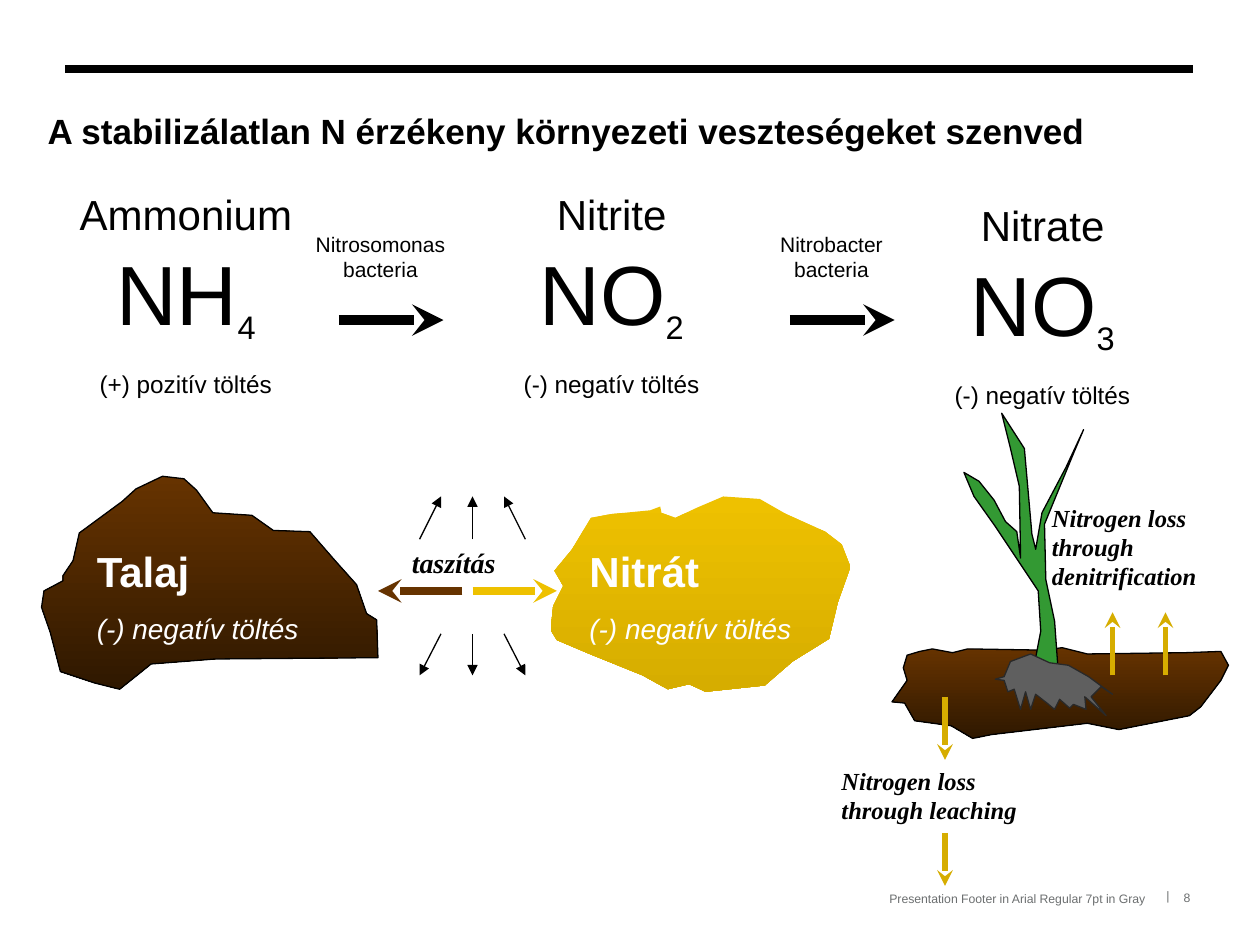
from dataclasses import dataclass
from typing import Optional

from lxml import etree
from pptx import Presentation
from pptx.dml.color import RGBColor
from pptx.enum.shapes import MSO_CONNECTOR
from pptx.enum.text import MSO_ANCHOR, PP_ALIGN
from pptx.oxml.ns import qn
from pptx.util import Inches, Pt

LEFT, CENTER, RIGHT = PP_ALIGN.LEFT, PP_ALIGN.CENTER, PP_ALIGN.RIGHT
TOP, MIDDLE = MSO_ANCHOR.TOP, MSO_ANCHOR.MIDDLE
STRAIGHT = MSO_CONNECTOR.STRAIGHT
COLUMNS, ROWS = 1000, 750
BLACK, WHITE, GRAY = "000000", "FFFFFF", "6C6F70"
BROWN, GOLD, DARK_GOLD = "663300", "EEC100", "D6AD00"
BROWN_FADE, GOLD_FADE = (BROWN, "2F1800"), (GOLD, DARK_GOLD)
SANS, SERIF = "Arial", "Times New Roman"


@dataclass
class Span:
    text: str
    size: float
    bold: bool = False
    italic: bool = False
    font: str = SANS
    color: str = BLACK
    lowered: bool = False


@dataclass
class Label:
    area: tuple
    paragraphs: list
    align: PP_ALIGN = LEFT
    anchor: MSO_ANCHOR = TOP
    spacing: Optional[object] = None
    gap: float = 0.575  # space before, as a share of the paragraph's text size
    inset: tuple = (0.1, 0.05)


@dataclass
class Outline:
    corners: list
    fills: tuple
    edge: Optional[str] = BLACK


deck = Presentation()
deck.slide_width, deck.slide_height = Inches(10), Inches(7.5)
page = deck.slides.add_slide(deck.slide_layouts[6])


def across(column: float) -> int:
    return round(deck.slide_width * column / COLUMNS)


def down(row: float) -> int:
    return round(deck.slide_height * row / ROWS)


def paint(target, color: str) -> None:
    target.rgb = RGBColor.from_string(color)


def add_span(para, item: Span) -> None:
    for index, line in enumerate(item.text.split("\n")):
        if index:
            para.add_line_break()
        span = para.add_run()
        span.text = line
        values = {"size": Pt(item.size), "bold": item.bold, "italic": item.italic, "name": item.font}
        for name, value in values.items():
            setattr(span.font, name, value)
        paint(span.font.color, item.color)
        if item.lowered:
            span.font._element.set("baseline", "-25000")


def add_label(label: Label) -> None:
    x, y, width, height = label.area
    box = page.shapes.add_textbox(across(x), down(y), across(width), down(height))
    frame = box.text_frame
    side, edge = map(Inches, label.inset)
    values = {"word_wrap": True, "vertical_anchor": label.anchor, "margin_left": side,
              "margin_right": side, "margin_top": edge, "margin_bottom": edge}
    for name, value in values.items():
        setattr(frame, name, value)
    for index, spans in enumerate(label.paragraphs):
        para = frame.add_paragraph() if index else frame.paragraphs[0]
        para.alignment = label.align
        if label.spacing is not None:
            para.line_spacing = label.spacing
        if index:
            para.space_before = Pt(round(label.gap * spans[0].size, 1))
        for item in spans:
            add_span(para, item)


def add_line(start: tuple, end: tuple, color: str, width: float, tip: Optional[str] = None) -> None:
    line = page.shapes.add_connector(STRAIGHT, across(start[0]), down(start[1]), across(end[0]), down(end[1]))
    paint(line.line.color, color)
    line.line.width = Pt(width)
    if tip:
        etree.SubElement(line.line._get_or_add_ln(), qn("a:tailEnd"), type=tip)
    etree.SubElement(line._element.spPr, qn("a:effectLst"))


def add_outline(outline: Outline) -> None:
    first, *others = [(across(x), down(y)) for x, y in outline.corners]
    builder = page.shapes.build_freeform(*first)
    builder.add_line_segments(others, close=True)
    shape = builder.convert_to_shape()
    shape.shadow.inherit = False
    if len(outline.fills) == 1:
        shape.fill.solid()
        paint(shape.fill.fore_color, outline.fills[0])
    else:
        shape.fill.gradient()
        shape.fill.gradient_angle = 270
        for position, (stop, color) in enumerate(zip(shape.fill.gradient_stops, outline.fills)):
            stop.position = position
            paint(stop.color, color)
    if outline.edge:
        paint(shape.line.color, outline.edge)
        shape.line.width = Pt(0.75)
    else:
        shape.line.fill.background()


SOIL = Outline([
    (50, 457), (58, 445), (63, 423), (97, 398), (108, 388), (129, 378), (146, 380), (156, 389), (169, 407),
    (200, 409), (217, 421), (246, 422), (266, 445), (283, 464), (291, 487), (299, 492), (300, 522),
    (171, 523), (120, 527), (95, 547), (75, 542), (48, 533), (40, 502), (33, 482), (35, 469), (50, 461)], BROWN_FADE)
NITRATE = Outline([
    (536, 411), (525, 407), (524, 402), (516, 405), (485, 408), (469, 411), (454, 436), (440, 453), (447, 465),
    (439, 481), (437, 500), (442, 508), (468, 519), (510, 536), (530, 547), (547, 543), (560, 549), (607, 544),
    (629, 525), (658, 507), (665, 478), (675, 450), (668, 432), (655, 422), (624, 408), (603, 396),
    (574, 394), (553, 403)], GOLD_FADE, None)
GROUND = Outline([
    (730, 517), (740, 515), (756, 518), (768, 515), (829, 516), (843, 514), (863, 519), (941, 518), (969, 517),
    (975, 528), (969, 540), (953, 561), (944, 568), (888, 579), (863, 574), (787, 583), (772, 586),
    (755, 576), (726, 572), (718, 558), (708, 557), (720, 540), (717, 530), (720, 520)], BROWN_FADE)
PLANT = Outline([
    (822, 522), (826, 501), (824, 469), (810, 448), (790, 418), (773, 394), (765, 375), (777, 382), (789, 397),
    (798, 414), (807, 422), (810, 443), (809, 386), (802, 356), (795, 328), (813, 356), (819, 424), (822, 436),
    (827, 407), (846, 371), (860, 341), (852, 360), (829, 416), (830, 460), (837, 493), (840, 535),
    (837, 544), (824, 536)], ("339933",))
ROOTS = Outline([
    (833, 526), (818, 519), (802, 525), (797, 537), (790, 539), (797, 540), (800, 549), (805, 547), (810, 563),
    (814, 549), (818, 563), (822, 551), (831, 558), (837, 563), (841, 555), (849, 562), (852, 559), (862, 563),
    (861, 553), (878, 568), (866, 553), (874, 545), (883, 551), (864, 537), (848, 528)], ("5F5F5F",), "292929")

add_line((52, 55), (947, 55), BLACK, 4.5)
for area, text, align, anchor in [
        ((446, 707, 463, 14), "Presentation Footer in Arial Regular 7pt in Gray", RIGHT, TOP),
        ((921, 705, 12, 15), "|", CENTER, TOP), ((934, 705, 16, 15), "8", CENTER, MIDDLE)]:
    add_label(Label(area, [[Span(text, 7, color=GRAY)]], align, anchor, inset=(0, 0)))

for outline in (SOIL, NITRATE, GROUND, PLANT, ROOTS):
    add_outline(outline)
for x, name in [(67, "Talaj"), (458, "Nitrát")]:
    add_label(Label((x, 428, 242, 81), [[Span(name, 24, bold=True, color=WHITE)],
                                        [Span("(-) negatív töltés", 16, italic=True, color=WHITE)]]))
for area, text, size in [((317, 428, 117, 37), "taszítás", 16),
                         ((658, 603, 192, 57), "Nitrogen loss\nthrough leaching", 14),
                         ((825, 394, 175, 80), "Nitrogen loss\nthrough\ndenitrification", 14)]:
    add_label(Label(area, [[Span(text, size, True, True, SERIF)]]))

for near, far in [(350, 333), (375, 375), (400, 417)]:
    add_line((near, 503), (far, 536), BLACK, 0.75, "triangle")
    add_line((far, 428), (near, 394), BLACK, 0.75, "triangle")
for start, end, color in [(367, 300, BROWN), (375, 442, GOLD)]:
    add_line((start, 469), (end, 469), color, 4.5, "stealth")
for x, start, end in [(883, 536, 486), (925, 536, 486), (750, 661, 703), (750, 553, 603)]:
    add_line((x, start), (x, end), DARK_GOLD, 3, "stealth")

for area, name, formula, count, charge in [
        ((35, 162, 225, 133), "Ammonium", "NH", "4", "(+) pozitív töltés"),
        ((352, 162, 267, 132), "Nitrite", "NO", "2", "(-) negatív töltés"),
        ((719, 171, 217, 132), "Nitrate", "NO", "3", "(-) negatív töltés")]:
    add_label(Label(area, [[Span(name, 24)], [Span(formula, 48), Span(count, 32, lowered=True)],
                           [Span(charge, 24, lowered=True)]], CENTER, spacing=0.5))
for x, bacteria in [(177, "Nitrosomonas"), (535, "Nitrobacter")]:
    add_line((x + 92, 254), (x + 175, 254), BLACK, 6, "stealth")
    add_label(Label((x, 179, 250, 50), [[Span(bacteria, 12)], [Span("bacteria", 12)]], CENTER, gap=0))

add_label(Label((28, 64, 972, 55), [[Span("A stabilizálatlan N érzékeny környezeti veszteségeket szenved", 20, bold=True)]],
                spacing=Pt(37)))
deck.save("out.pptx")
